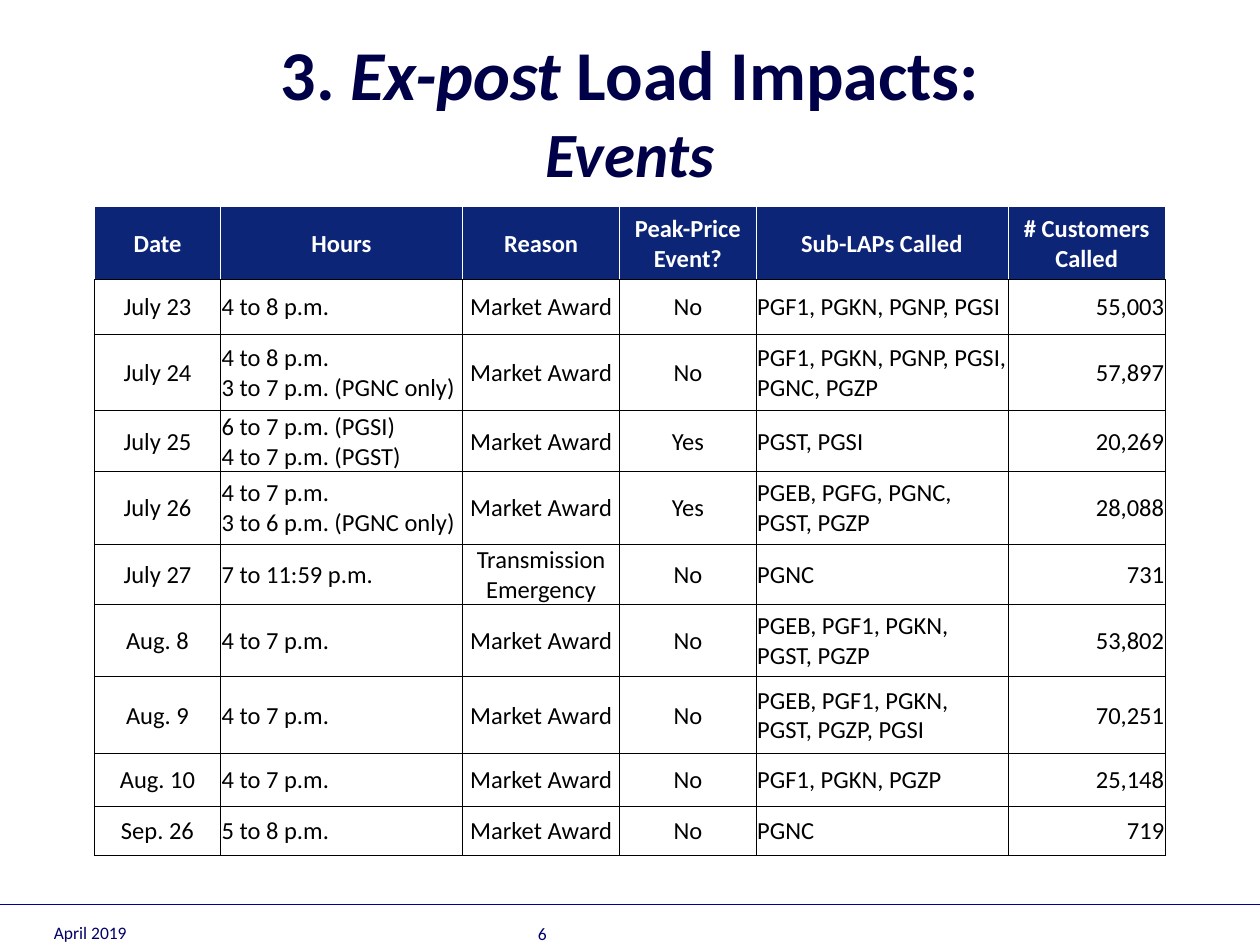
from copy import deepcopy

from lxml import etree
from pptx import Presentation
from pptx.dml.color import RGBColor
from pptx.enum.shapes import MSO_CONNECTOR
from pptx.enum.text import MSO_ANCHOR, PP_ALIGN
from pptx.oxml.ns import qn
from pptx.util import Inches, Pt

LEFT, CENTER, RIGHT = PP_ALIGN.LEFT, PP_ALIGN.CENTER, PP_ALIGN.RIGHT
MIDDLE, BOTTOM = MSO_ANCHOR.MIDDLE, MSO_ANCHOR.BOTTOM
STRAIGHT = MSO_CONNECTOR.STRAIGHT

FONT = "Calibri"
BLACK, WHITE = "000000", "FFFFFF"
TITLE_NAVY, HEADER_BLUE = "000048", "0C2577"
FOOTER_NAVY, RULE_BLUE = "000066", "000099"

HEADERS = ["Date", "Hours", "Reason", "Peak-Price Event?",
           "Sub-LAPs Called", "# Customers Called"]
MARKET = "Market Award"
EVENTS = [
    ["July 23", "4 to 8 p.m.", MARKET, "No", "PGF1, PGKN, PGNP, PGSI", "55,003"],
    ["July 24", "4 to 8 p.m.\n3 to 7 p.m. (PGNC only)", MARKET, "No",
     "PGF1, PGKN, PGNP, PGSI, PGNC, PGZP", "57,897"],
    ["July 25", "6 to 7 p.m. (PGSI)\n4 to 7 p.m. (PGST)", MARKET, "Yes",
     "PGST, PGSI", "20,269"],
    ["July 26", "4 to 7 p.m.\n3 to 6 p.m. (PGNC only)", MARKET, "Yes",
     "PGEB, PGFG, PGNC, PGST, PGZP", "28,088"],
    ["July 27", "7 to 11:59 p.m.", "Transmission Emergency", "No", "PGNC", "731"],
    ["Aug. 8", "4 to 7 p.m.", MARKET, "No", "PGEB, PGF1, PGKN, PGST, PGZP", "53,802"],
    ["Aug. 9", "4 to 7 p.m.", MARKET, "No",
     "PGEB, PGF1, PGKN, PGST, PGZP, PGSI", "70,251"],
    ["Aug. 10", "4 to 7 p.m.", MARKET, "No", "PGF1, PGKN, PGZP", "25,148"],
    ["Sep. 26", "5 to 8 p.m.", MARKET, "No", "PGNC", "719"],
]
COLUMN_WIDTHS = [1, 1.92, 1.25, 1.08, 2, 1.25]
ROW_HEIGHTS = [0.58, 0.43, 0.61, 0.48, 0.58, 0.48, 0.57, 0.61, 0.42, 0.39]
COLUMN_ALIGNS = [CENTER, LEFT, CENTER, CENTER, LEFT, RIGHT]
CELL_FORMAT = {"vertical_anchor": MIDDLE, "margin_left": Inches(0.01),
               "margin_right": Inches(0.01), "margin_top": Inches(0.01),
               "margin_bottom": 0}


def rgb(color):
    return RGBColor.from_string(color)


def set_attributes(target, formats):
    for name, value in formats.items():
        setattr(target, name, value)


def add_text(paragraph, text, color, **font_format):
    """Add text as runs, with line breaks that share the run format."""
    for index, line in enumerate(text.split("\n")):
        if index:
            paragraph.add_line_break()
            line_break = paragraph._p.findall(qn("a:br"))[-1]
            line_break.insert(0, deepcopy(run._r.rPr))
        run = paragraph.add_run()
        run.text = line
        set_attributes(run.font, {"name": FONT, **font_format})
        run.font.color.rgb = rgb(color)


def add_text_box(slide, box, anchor, align):
    frame = slide.shapes.add_textbox(*map(Inches, box)).text_frame
    set_attributes(frame, {"word_wrap": True, "vertical_anchor": anchor})
    paragraph = frame.paragraphs[0]
    paragraph.alignment = align
    return paragraph


def add_title(slide, box):
    title = add_text_box(slide, box, MIDDLE, CENTER)
    for text, size, italic in [("3. ", 40, False), ("Ex-post", 40, True),
                               (" Load Impacts:\n", 40, False),
                               ("Events", 36, True)]:
        add_text(title, text, TITLE_NAVY, size=Pt(size), bold=True, italic=italic)


def set_borders(cell, colors):
    """Draw left, right, top and bottom borders; None hides a side."""
    properties = cell._tc.get_or_add_tcPr()
    for index, (side, color) in enumerate(zip("LRTB", colors)):
        border = etree.Element(qn(f"a:ln{side}"), w=str(Pt(0.5)))
        if color:
            fill = etree.SubElement(border, qn("a:solidFill"))
            etree.SubElement(fill, qn("a:srgbClr"), val=color)
        else:
            etree.SubElement(border, qn("a:noFill"))
        properties.insert(index, border)


def fill_cell(cell, text, align, color, bold):
    set_attributes(cell, CELL_FORMAT)
    paragraph = cell.text_frame.paragraphs[0]
    paragraph.alignment = align
    add_text(paragraph, text, color, size=Pt(14), bold=bold)


def add_events_table(slide, left, top):
    rows = [HEADERS] + EVENTS
    table = slide.shapes.add_table(
        len(rows), len(HEADERS), Inches(left), Inches(top),
        Inches(sum(COLUMN_WIDTHS)), Inches(sum(ROW_HEIGHTS))).table
    set_attributes(table, {"first_row": False, "horz_banding": False})
    for column, width in zip(table.columns, COLUMN_WIDTHS):
        column.width = Inches(width)
    for row, height in zip(table.rows, ROW_HEIGHTS):
        row.height = Inches(height)

    last = len(HEADERS) - 1
    for column, header in enumerate(HEADERS):
        cell = table.cell(0, column)
        fill_cell(cell, header, CENTER, WHITE, True)
        cell.fill.solid()
        cell.fill.fore_color.rgb = rgb(HEADER_BLUE)
        set_borders(cell, [WHITE if column > 0 else None,
                           WHITE if column < last else None, None, BLACK])
    for row, event in enumerate(EVENTS, start=1):
        for column, (text, align) in enumerate(zip(event, COLUMN_ALIGNS)):
            cell = table.cell(row, column)
            fill_cell(cell, text, align, BLACK, False)
            cell.fill.background()
            set_borders(cell, [BLACK] * 4)


def add_footer(slide, left, top, width):
    rule_y = Inches(top + 0.17)
    rule = slide.shapes.add_connector(
        STRAIGHT, Inches(left), rule_y, Inches(left + width), rule_y)
    rule.line.color.rgb = rgb(RULE_BLUE)
    rule.line.width = Pt(0.75)
    etree.SubElement(rule._element.spPr, qn("a:effectLst"))
    for text, x, y in [("April 2019", 0.33, 0), ("6", 4.17, 0.01)]:
        box = (left + x, top + y, 2.33, 0.52)
        add_text(add_text_box(slide, box, BOTTOM, LEFT), text, FOOTER_NAVY,
                 size=Pt(10))


def main():
    presentation = Presentation()
    presentation.slide_width = Inches(10)
    presentation.slide_height = Inches(7.5)
    slide = presentation.slides.add_slide(presentation.slide_layouts[6])
    add_footer(slide, 0, 7.01, 10)
    add_title(slide, (0.5, 0.25, 9, 1.25))
    add_events_table(slide, 0.75, 1.64)
    presentation.save("out.pptx")


if __name__ == "__main__":
    main()
